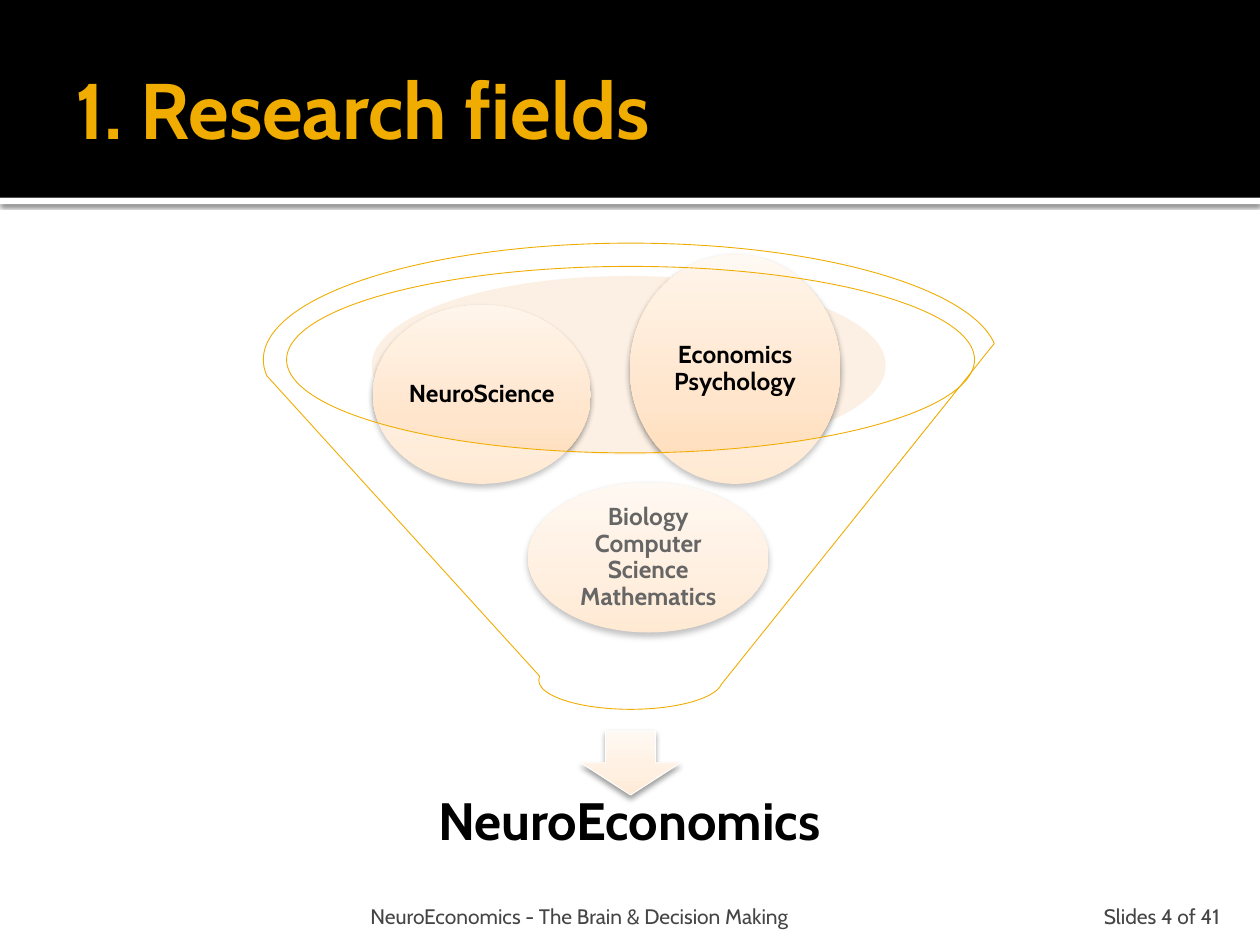
from dataclasses import dataclass
from typing import NamedTuple, Optional

from lxml.etree import SubElement
from pptx import Presentation
from pptx.dml.color import RGBColor
from pptx.enum.shapes import MSO_SHAPE
from pptx.enum.text import MSO_ANCHOR, PP_ALIGN
from pptx.oxml.ns import qn
from pptx.util import Inches, Pt

FONT = "Cabin"
GOLD, BLACK, WHITE, GREY = "F0AD00", "000000", "FFFFFF", "454545"
PEACH = ((0, "FFDBB5"), (35, "FFE5CB"), (100, "FFF5EB"))
CREAM = ((0, "FFEAD6"), (35, "FFF0E1"), (100, "FFF9F3"))

deck = Presentation()
deck.slide_width, deck.slide_height = Inches(10), Inches(7.5)
COL, ROW = deck.slide_width / 100, deck.slide_height / 75


class Box(NamedTuple):
    """Left, top, width and height in grid columns and rows."""
    x: float
    y: float
    w: float
    h: float

    def emu(self) -> tuple:
        return (round(self.x * COL), round(self.y * ROW),
                round(self.w * COL), round(self.h * ROW))


class Shade(NamedTuple):
    alpha: int
    blur: float
    dist: float


SOFT = Shade(38, 3.5, 2)


@dataclass
class Style:
    size: float
    color: str = BLACK
    bold: bool = True
    align: PP_ALIGN = PP_ALIGN.CENTER
    anchor: MSO_ANCHOR = MSO_ANCHOR.MIDDLE
    inset: tuple = (0.02, 0.02, 0.02, 0.02)
    space: float = 0.9


@dataclass
class Field:
    box: Box
    text: str


def rgb(code: str) -> RGBColor:
    return RGBColor.from_string(code)


def write(shape, text: str, style: Style) -> None:
    frame = shape.text_frame
    frame.word_wrap = True
    frame.vertical_anchor = style.anchor
    (frame.margin_left, frame.margin_top,
     frame.margin_right, frame.margin_bottom) = map(Inches, style.inset)
    para = frame.paragraphs[0]
    para.text = text
    para.alignment, para.line_spacing = style.align, style.space
    for run in para.runs:
        font = run.font
        font.name, font.size, font.bold = FONT, Pt(style.size), style.bold
        font.color.rgb = rgb(style.color)


def ramp(shape, stops: tuple) -> None:
    """Fill with a gradient that rises from bottom to top."""
    shape.fill.gradient()
    grad = shape.element.spPr.find(qn("a:gradFill"))
    for part in list(grad):
        grad.remove(part)
    items = SubElement(grad, qn("a:gsLst"))
    for pos, code in stops:
        stop = SubElement(items, qn("a:gs"), pos=str(pos * 1000))
        SubElement(stop, qn("a:srgbClr"), val=code)
    SubElement(grad, qn("a:lin"), ang=str(270 * 60000), scaled="0")


def cast(shape, shade: Shade) -> None:
    """Drop a black shadow straight down."""
    drop = SubElement(shape.element.spPr.find(qn("a:effectLst")),
                      qn("a:outerShdw"), blurRad=str(Pt(shade.blur)),
                      dist=str(Pt(shade.dist)), dir=str(90 * 60000),
                      algn="ctr", rotWithShape="0")
    tone = SubElement(drop, qn("a:srgbClr"), val=BLACK)
    SubElement(tone, qn("a:alpha"), val=str(shade.alpha * 1000))


def draw(shapes, kind: MSO_SHAPE, box: Box, fill, alpha: int = 100,
         line: Optional[str] = None, shade: Optional[Shade] = None):
    shape = shapes.add_shape(kind, *box.emu())
    shape.shadow.inherit = False
    if isinstance(fill, tuple):
        ramp(shape, fill)
    else:
        shape.fill.solid()
        shape.fill.fore_color.rgb = rgb(fill)
        if alpha < 100:
            tone = shape.element.spPr.find(qn("a:solidFill"))[0]
            SubElement(tone, qn("a:alpha"), val=str(alpha * 1000))
    if line:
        shape.line.color.rgb, shape.line.width = rgb(line), Pt(0.5)
    else:
        shape.line.fill.background()
    if shade:
        cast(shape, shade)
    return shape


def label(shapes, box: Box, text: str, style: Style) -> None:
    write(shapes.add_textbox(*box.emu()), text, style)


def header(slide) -> None:
    title = slide.shapes.title
    strip = draw(slide.shapes, MSO_SHAPE.RECTANGLE, Box(0, 15.7, 100, 0.5),
                 WHITE, shade=Shade(60, 2.5, 0.8))
    band = draw(slide.shapes, MSO_SHAPE.RECTANGLE, Box(0, 0, 100, 15.7), BLACK)
    for shape in (strip, band):
        title.element.addprevious(shape.element)
    title.left, title.top, title.width, title.height = Box(5, 1.7, 90, 13.7).emu()
    write(title, "1. Research fields",
          Style(45, GOLD, align=PP_ALIGN.LEFT, inset=(0.1, 0.05, 0.05, 0.05),
                space=1.0))


def funnel(slide) -> None:
    shapes = slide.shapes.add_group_shape().shapes
    draw(shapes, MSO_SHAPE.OVAL, Box(29.5, 21.9, 40.8, 14.2), "F8DBBD", 40)
    draw(shapes, MSO_SHAPE.DOWN_ARROW, Box(46.1, 58, 7.9, 5.1), CREAM,
         line=WHITE, shade=SOFT)
    label(shapes, Box(31, 60.6, 37.9, 9.5), "NeuroEconomics",
          Style(30, inset=(0.23,) * 4))
    for field in (
        Field(Box(41.9, 38.3, 19.1, 11.9),
              "Biology\vComputer Science\vMathematics"),
        Field(Box(29.6, 24.2, 17.3, 14.2), "NeuroScience"),
        Field(Box(50, 20.2, 16.7, 18.2), "Economics\vPsychology"),
    ):
        ball = draw(shapes, MSO_SHAPE.OVAL, field.box, PEACH, shade=SOFT)
        write(ball, field.text, Style(14))
    draw(shapes, MSO_SHAPE.FUNNEL, Box(20.9, 19.3, 58.3, 37), WHITE, 40, GOLD)


def footer(slide) -> None:
    for box, text, align, side in (
        (Box(28.9, 70.8, 52.6, 2.9),
         "NeuroEconomics - The Brain & Decision Making", PP_ALIGN.LEFT, 0.05),
        (Box(82.3, 70.8, 15.5, 2.9), "Slides 4 of 41", PP_ALIGN.RIGHT, 0.1),
    ):
        label(slide.shapes, box, text,
              Style(12, GREY, False, align, MSO_ANCHOR.BOTTOM,
                    (side, 0.05, side, 0), 1.0))


def main() -> None:
    slide = deck.slides.add_slide(deck.slide_layouts[5])
    header(slide)
    funnel(slide)
    footer(slide)
    deck.save("out.pptx")


if __name__ == "__main__":
    main()
